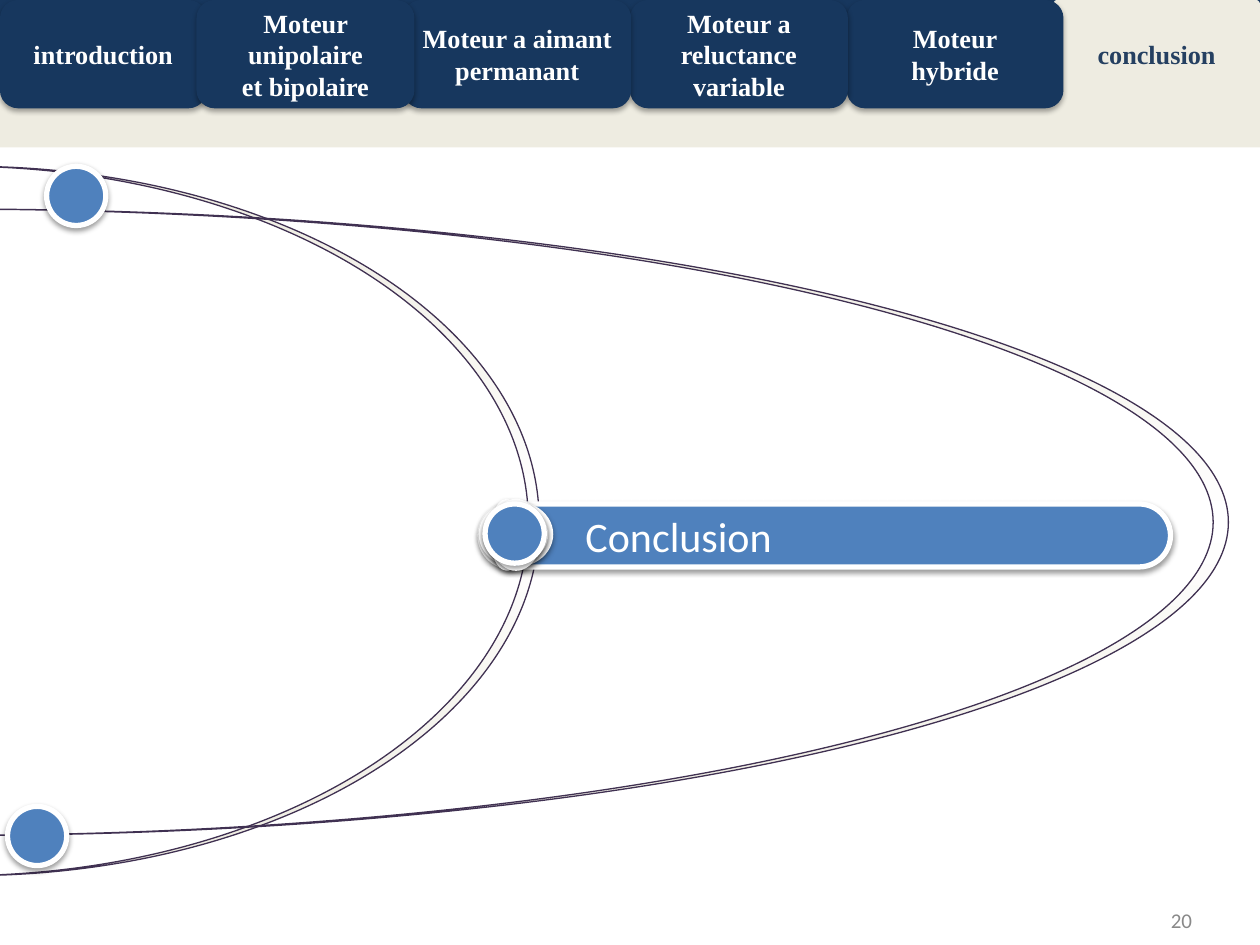
"""Build the conclusion slide with its navigation tabs and orbit curves."""
from lxml.etree import SubElement
from pptx import Presentation
from pptx.dml.color import RGBColor
from pptx.enum.shapes import MSO_SHAPE
from pptx.enum.text import MSO_ANCHOR, PP_ALIGN
from pptx.oxml.ns import qn
from pptx.util import Pt

COLORS = {
    "navy": "17375E", "cream": "EEECE1", "white": "FFFFFF", "blue": "4F81BD",
    "purple": "403152", "ink": "254061", "gray": "898989", "black": "000000",
}

deck = Presentation()
deck.slide_width, deck.slide_height = Pt(720), Pt(540)
page = deck.slides.add_slide(deck.slide_layouts[6])


def add_shape(kind, frame, fill, border=None, shade=None):
    shape = page.shapes.add_shape(kind, *[Pt(value) for value in frame])
    shape.shadow.inherit = False
    shape.fill.solid()
    shape.fill.fore_color.rgb = RGBColor.from_string(COLORS[fill])
    if border:
        color, width = border
        shape.line.color.rgb = RGBColor.from_string(COLORS[color])
        shape.line.width = Pt(width)
    else:
        shape.line.fill.background()
    if shade:
        distance, opacity = shade
        effects = shape._element.spPr.find(qn("a:effectLst"))
        shadow = SubElement(effects, qn("a:outerShdw"), blurRad=str(Pt(3.1)),
                            dist=str(Pt(distance)), dir="5400000", rotWithShape="0")
        color = SubElement(shadow, qn("a:srgbClr"), val=COLORS["black"])
        SubElement(color, qn("a:alpha"), val=str(opacity * 1000))
    return shape


def add_text(shape, lines, font, size, color, align, bold=False):
    frame = shape.text_frame
    frame.word_wrap = True
    frame.vertical_anchor = MSO_ANCHOR.MIDDLE
    for index, line in enumerate(lines):
        para = frame.add_paragraph() if index else frame.paragraphs[0]
        para.alignment = align
        span = para.add_run()
        span.text = line
        span.font.name = font
        span.font.size = Pt(size)
        span.font.bold = bold
        span.font.color.rgb = RGBColor.from_string(COLORS[color])


orbits = [
    ((-18, 95.04, 326.16, 405.36), 0.019),
    ((-22.32, 119.52, 724.32, 357.84), 0.012),
]
for frame, thickness in orbits:
    orbit = add_shape(MSO_SHAPE.MOON, frame, "cream", ("purple", 0.75))
    orbit.adjustments[0] = thickness
    orbit._element.spPr.find(qn("a:xfrm")).set("flipH", "1")
    orbit.fill.gradient()
    orbit.fill.gradient_angle = 270
    stop_list = orbit._element.spPr.find(qn("a:gradFill")).find(qn("a:gsLst"))
    for stop in list(stop_list):
        stop_list.remove(stop)
    for position, name in [(0, "cream"), (50, "white"), (100, "cream")]:
        stop = SubElement(stop_list, qn("a:gs"), pos=str(position * 1000))
        SubElement(stop, qn("a:srgbClr"), val=COLORS[name])

number = page.shapes.add_textbox(Pt(520.56), Pt(511.2), Pt(167.76), Pt(28.8))
add_text(number, ["20"], "Calibri", 12, "gray", PP_ALIGN.RIGHT)

rim, soft = ("white", 3), (1.6, 38)
banner = add_shape(MSO_SHAPE.ROUNDED_RECTANGLE, (274.32, 288, 394.56, 36), "blue", rim, soft)
banner.adjustments[0] = 0.5
banner.text_frame.margin_left = Pt(55)
add_text(banner, ["Conclusion"], "Calibri", 24, "white", PP_ALIGN.LEFT)

beads = [
    (275.04, 288, 39.6, 34.56), (277.2, 290.16, 34.56, 30.24),
    (281.52, 286.56, 16.56, 38.16), (281.52, 286.56, 26.64, 38.16),
    (277.2, 288, 33.84, 33.84), (26.64, 95.04, 33.84, 33.84),
    (4.32, 460.8, 33.84, 33.84),
]
for frame in beads:
    add_shape(MSO_SHAPE.OVAL, frame, "blue", rim, soft)

add_shape(MSO_SHAPE.RECTANGLE, (0, 0, 720, 44.64), "navy")
add_shape(MSO_SHAPE.RECTANGLE, (0, 44.64, 720, 39.6), "cream")

tabs = [
    (601.92, 118.08, ["conclusion"]),
    (483.84, 123.84, ["Moteur", "hybride"]),
    (0, 118.08, ["introduction"]),
    (360, 124.56, ["Moteur a reluctance variable"]),
    (230.4, 130.32, ["Moteur a aimant permanant"]),
    (112.32, 124.56, ["Moteur unipolaire", "et bipolaire"]),
]
for left, width, lines in tabs:
    active = lines == ["conclusion"]
    tab = add_shape(MSO_SHAPE.ROUNDED_RECTANGLE, (left, 0, width, 61.92),
                    "cream" if active else "navy", shade=None if active else (1.8, 35))
    tab.adjustments[0] = 0.037 if active else 0.167
    add_text(tab, lines, "Times New Roman", 15, "ink" if active else "white",
             PP_ALIGN.CENTER, bold=True)

deck.save("out.pptx")
